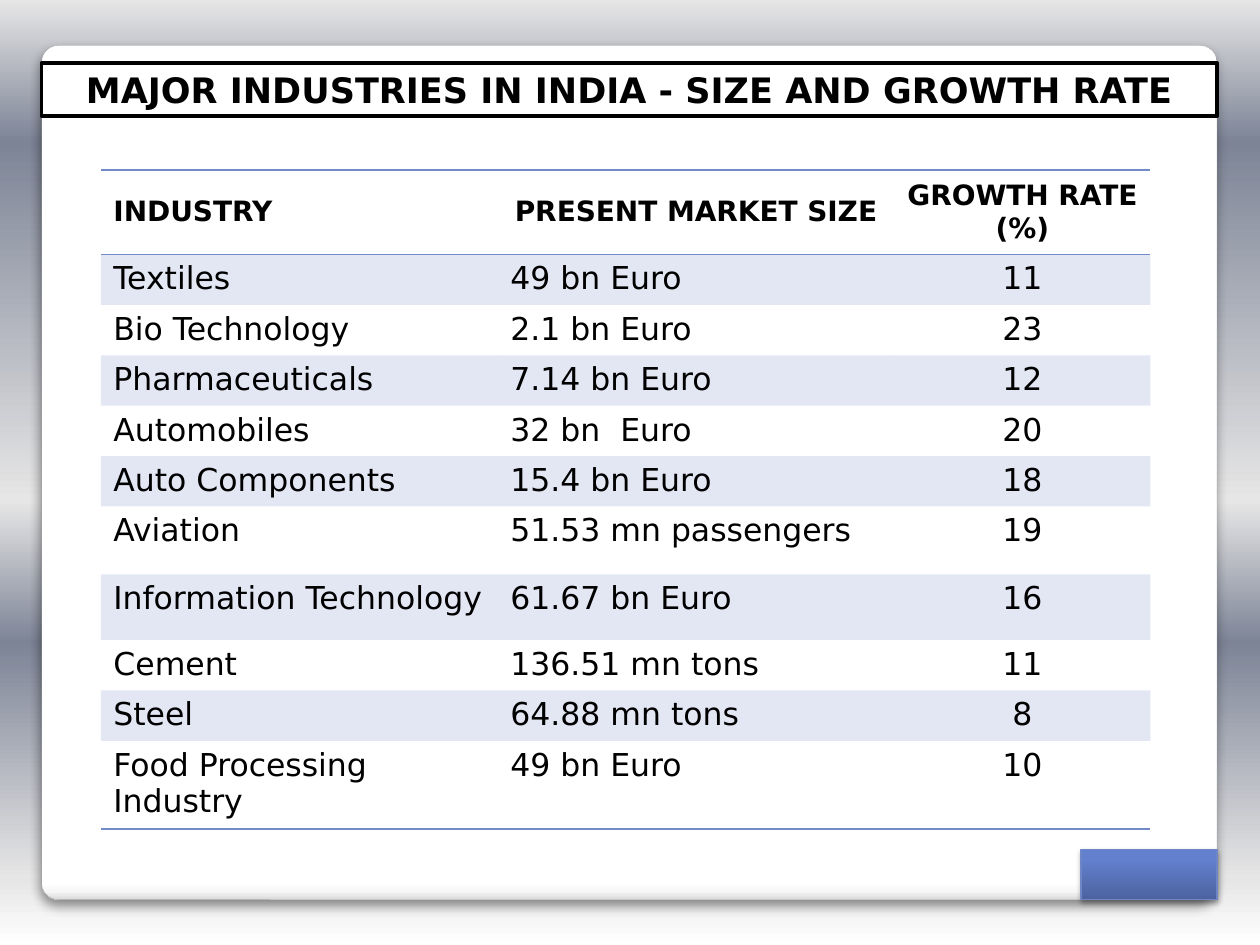
import lxml.etree
import pptx
import pptx.dml.color
import pptx.enum.shapes
import pptx.enum.text
import pptx.oxml.ns
import pptx.util

Inches = pptx.util.Inches
Pt = pptx.util.Pt
ALIGN = pptx.enum.text.PP_ALIGN
ANCHOR = pptx.enum.text.MSO_ANCHOR
SHAPE = pptx.enum.shapes.MSO_SHAPE
qn = pptx.oxml.ns.qn

COLORS = {
    "black": "000000", "white": "FFFFFF", "accent": "738AC8",
    "panel_line": "A4A4A4", "corner_line": "6E86C6",
    "silver": "E6E6E6", "steel": "7D8496",
    "near_white": "F7F7F7", "light_gray": "DADADA",
    "corner_dark": "4C639F", "corner_mid": "6380CE", "corner_light": "6180D1",
}
NO_TABLE_STYLE = "{2D5ABB26-0587-4C30-8999-92F81FD0307C}"

HEADERS = ["INDUSTRY", "PRESENT MARKET SIZE", "GROWTH RATE (%)"]
INDUSTRIES = [
    ("Textiles", "49 bn Euro", "11"),
    ("Bio Technology", "2.1 bn Euro", "23"),
    ("Pharmaceuticals", "7.14 bn Euro", "12"),
    ("Automobiles", "32 bn  Euro", "20"),
    ("Auto Components", "15.4 bn Euro", "18"),
    ("Aviation", "51.53 mn passengers", "19"),
    ("Information Technology", "61.67 bn Euro", "16"),
    ("Cement", "136.51 mn tons", "11"),
    ("Steel", "64.88 mn tons", "8"),
    ("Food Processing Industry", "49 bn Euro", "10"),
]
COLUMN_WIDTHS = [3.15, 3.15, 2.03]
ROW_HEIGHTS = [0.67] + [0.4] * 5 + [0.54, 0.52, 0.4, 0.4, 0.7]


def rgb(name):
    return pptx.dml.color.RGBColor.from_string(COLORS[name])


def add_node(parent, tag, **attributes):
    node = lxml.etree.SubElement(parent, qn(tag))
    for key, value in attributes.items():
        node.set(key, str(value))
    return node


def add_color(parent, name, alpha=None):
    node = add_node(parent, "a:srgbClr", val=COLORS[name])
    if alpha is not None:
        add_node(node, "a:alpha", val=alpha * 1000)


def set_gradient(properties, stops, angle):
    """Replace the solid fill in properties by a linear gradient."""
    solid = properties.find(qn("a:solidFill"))
    gradient = add_node(properties, "a:gradFill", rotWithShape=1)
    properties.replace(solid, gradient)
    stop_list = add_node(gradient, "a:gsLst")
    for position, name in stops:
        add_color(add_node(stop_list, "a:gs", pos=position * 1000), name)
    add_node(gradient, "a:lin", ang=angle * 60000, scaled=0)


def write_text(frame, text, font="DejaVu Sans", size=18, color="black",
               bold=False, align=ALIGN.LEFT):
    frame.word_wrap = True
    para = frame.paragraphs[0]
    para.alignment = align
    span = para.add_run()
    span.text = text
    span.font.name = font
    span.font.size = Pt(size)
    span.font.bold = bold
    span.font.color.rgb = rgb(color)


class SlideBuilder:
    """Holds the style and the current slide."""

    def __init__(self, slide, rule_color="accent", rule_width=1, band_alpha=20):
        self.slide = slide
        self.rule_color = rule_color
        self.rule_width = rule_width
        self.band_alpha = band_alpha

    def background(self, stops, angle):
        self.slide.background.fill.solid()
        set_gradient(self.slide.element.xpath(".//p:bgPr")[0], stops, angle)

    def box(self, kind, left, top, width, height, line, line_width,
            stops=None, angle=0, shadow=None):
        """Add a shape; shadow is (alpha, blur, distance) in percent and points."""
        shape = self.slide.shapes.add_shape(
            kind, Inches(left), Inches(top), Inches(width), Inches(height))
        shape.shadow.inherit = False
        shape.line.color.rgb = rgb(line)
        shape.line.width = Pt(line_width)
        properties = shape.element.spPr
        if stops:
            shape.fill.solid()
            set_gradient(properties, stops, angle)
        else:
            shape.fill.background()
        if shadow:
            alpha, blur, distance = shadow
            outer = add_node(properties.find(qn("a:effectLst")), "a:outerShdw",
                             blurRad=Pt(blur), dist=Pt(distance),
                             dir=90 * 60000, rotWithShape=0)
            add_color(outer, "black", alpha)
        return shape

    def rule(self, cell, side):
        line = add_node(cell._tc.get_or_add_tcPr(), side, w=Pt(self.rule_width))
        add_color(add_node(line, "a:solidFill"), self.rule_color)

    def band(self, cell):
        cell.fill.solid()
        cell.fill.fore_color.rgb = rgb(self.rule_color)
        color = cell._tc.tcPr.find(qn("a:solidFill"))[0]
        add_node(color, "a:alpha", val=self.band_alpha * 1000)

    def table(self, left, top, headers, records, widths, heights):
        rows = [headers] + records
        frame = self.slide.shapes.add_table(
            len(rows), len(headers), Inches(left), Inches(top),
            Inches(sum(widths)), Inches(sum(heights)))
        table = frame.table
        table.horz_banding = False
        table._tbl.tblPr.find(qn("a:tableStyleId")).text = NO_TABLE_STYLE
        for column, width in zip(table.columns, widths):
            column.width = Inches(width)
        for row, height in zip(table.rows, heights):
            row.height = Inches(height)
        header_aligns = [ALIGN.LEFT, ALIGN.CENTER, ALIGN.CENTER]
        body_aligns = [ALIGN.LEFT, ALIGN.JUSTIFY, ALIGN.CENTER]
        for row_index, values in enumerate(rows):
            is_header = row_index == 0
            aligns = header_aligns if is_header else body_aligns
            for column_index, value in enumerate(values):
                cell = table.cell(row_index, column_index)
                write_text(cell.text_frame, value, size=16 if is_header else 18,
                           bold=is_header, align=aligns[column_index])
                if is_header:
                    cell.vertical_anchor = ANCHOR.MIDDLE
                    self.rule(cell, "a:lnT")
                if is_header or row_index == len(records):
                    self.rule(cell, "a:lnB")
                if row_index % 2:
                    self.band(cell)
                else:
                    cell.fill.background()


def main():
    deck = pptx.Presentation()
    deck.slide_width = Inches(10)
    deck.slide_height = Inches(7.5)
    page = SlideBuilder(deck.slides.add_slide(deck.slide_layouts[6]))

    page.background([(0, "white"), (7, "silver"), (32, "steel"), (47, "silver"),
                     (85, "steel"), (100, "silver")], 270)
    panel = page.box(SHAPE.ROUNDED_RECTANGLE, 0.33, 0.36, 9.33, 6.78,
                     "panel_line", 0.16,
                     [(0, "white"), (98, "white"), (99, "near_white"),
                      (100, "light_gray")], 90, shadow=(44, 6, 4))
    panel.adjustments[0] = 0.02

    title = page.box(SHAPE.RECTANGLE, 0.33, 0.5, 9.33, 0.42, "black", 2.25)
    write_text(title.text_frame, "MAJOR INDUSTRIES IN INDIA - SIZE AND GROWTH RATE",
               size=20, bold=True, align=ALIGN.CENTER)

    page.table(0.8, 1.35, HEADERS, INDUSTRIES, COLUMN_WIDTHS, ROW_HEIGHTS)

    page.box(SHAPE.RECTANGLE, 8.58, 6.74, 1.08, 0.4, "corner_line", 0.75,
             [(0, "corner_dark"), (80, "corner_mid"), (100, "corner_light")],
             270, shadow=(35, 3.1, 1.8))

    deck.save("out.pptx")


if __name__ == "__main__":
    main()
